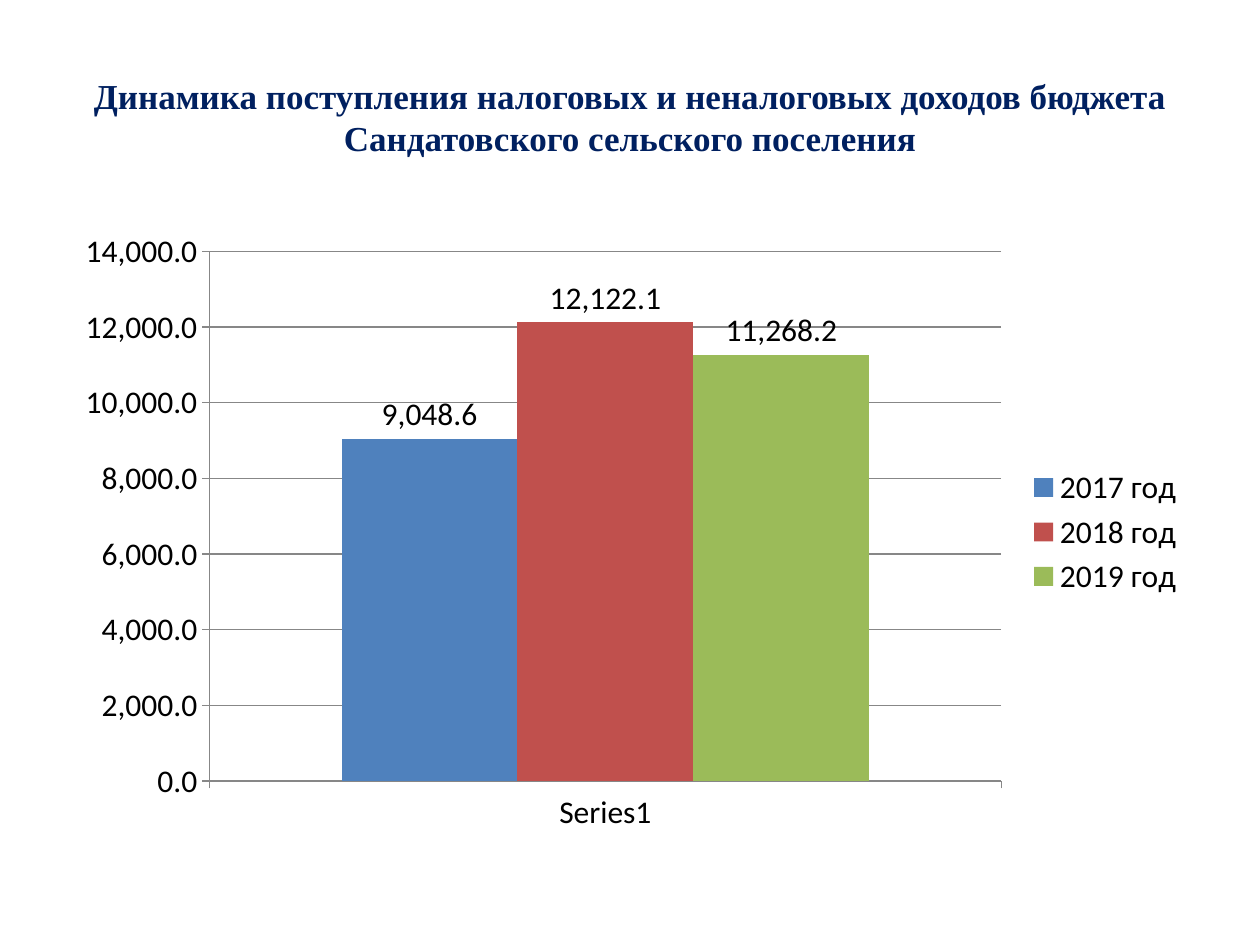
from pptx import Presentation
from pptx.chart.data import CategoryChartData
from pptx.dml.color import RGBColor
from pptx.enum.chart import XL_CHART_TYPE as ChartType, XL_LABEL_POSITION as LabelPos
from pptx.enum.chart import XL_LEGEND_POSITION as LegendPos, XL_TICK_MARK as Tick
from pptx.enum.text import MSO_ANCHOR as Anchor, PP_ALIGN as Align
from pptx.util import Emu, Pt

PX = 914400 // 126
COLORS = {
    "title": "002060", "text": "000000", "line": "878787",
    "2017 год": "4F81BD", "2018 год": "C0504D", "2019 год": "9BBB59",
}
REVENUE = {"2017 год": 9048.6, "2018 год": 12122.1, "2019 год": 11268.2}
NUMBER_FORMAT = "#,##0.0"


def px(*lengths):
    """Turn pixel lengths into EMU."""
    return [Emu(n * PX) for n in lengths]


def color(name):
    """Return the named colour."""
    return RGBColor.from_string(COLORS[name])


def style_font(font, size, face, name, bold=False):
    """Format a font."""
    font.size, font.name, font.bold = Pt(size), face, bold
    font.color.rgb = color(name)


def write(tf, text, size=20, face="Times New Roman", name="title", bold=True, align=Align.CENTER):
    """Write one formatted paragraph into a text frame."""
    p = tf.paragraphs[0]
    p.alignment = align
    r = p.add_run()
    r.text = text
    style_font(r.font, size, face, name, bold)


def add_title(s, text, box):
    """Place and fill the title placeholder."""
    sp = s.shapes.title
    sp.left, sp.top, sp.width, sp.height = px(*box)
    sp.text_frame.word_wrap = True
    sp.text_frame.vertical_anchor = Anchor.MIDDLE
    write(sp.text_frame, text)


def style_axis(axis):
    """Format an axis line and its ticks."""
    axis.major_tick_mark, axis.minor_tick_mark = Tick.OUTSIDE, Tick.NONE
    axis.format.line.color.rgb = color("line")
    axis.format.line.width = Pt(0.75)


def add_revenue_chart(s, box):
    """Add the column chart with one series per year."""
    data = CategoryChartData(number_format=NUMBER_FORMAT)
    data.categories = ["Series1"]
    for year, value in REVENUE.items():
        data.add_series(year, [value])
    chart = s.shapes.add_chart(ChartType.COLUMN_CLUSTERED, *px(*box), data).chart
    style_font(chart.font, 18, "Calibri", "text")
    chart.has_title = False
    chart.has_legend = True
    chart.legend.position = LegendPos.RIGHT
    chart.legend.include_in_layout = False

    style_axis(chart.category_axis)
    axis = chart.value_axis
    style_axis(axis)
    axis.minimum_scale, axis.maximum_scale, axis.major_unit = 0, 14000, 2000
    axis.tick_labels.number_format = NUMBER_FORMAT
    axis.tick_labels.number_format_is_linked = False
    axis.has_major_gridlines = True
    axis.major_gridlines.format.line.color.rgb = color("line")
    axis.major_gridlines.format.line.width = Pt(0.75)

    plot = chart.plots[0]
    plot.gap_width, plot.overlap, plot.vary_by_categories = 150, 0, False
    for series in plot.series:
        series.format.fill.solid()
        series.format.fill.fore_color.rgb = color(series.name)
        series.invert_if_negative = False
        labels = series.data_labels
        labels.show_value = True
        labels.position = LabelPos.OUTSIDE_END
        labels.number_format = NUMBER_FORMAT
        labels.number_format_is_linked = False


def main():
    """Build and save the slide."""
    prs = Presentation()
    prs.slide_width, prs.slide_height = px(1260, 945)
    s = prs.slides.add_slide(prs.slide_layouts[5])
    add_title(
        s,
        "Динамика поступления налоговых и неналоговых доходов бюджета "
        "Сандатовского сельского поселения",
        (63, 38, 1134, 158),
    )
    add_revenue_chart(s, (63, 220, 1134, 624))
    prs.save("out.pptx")


if __name__ == "__main__":
    main()
